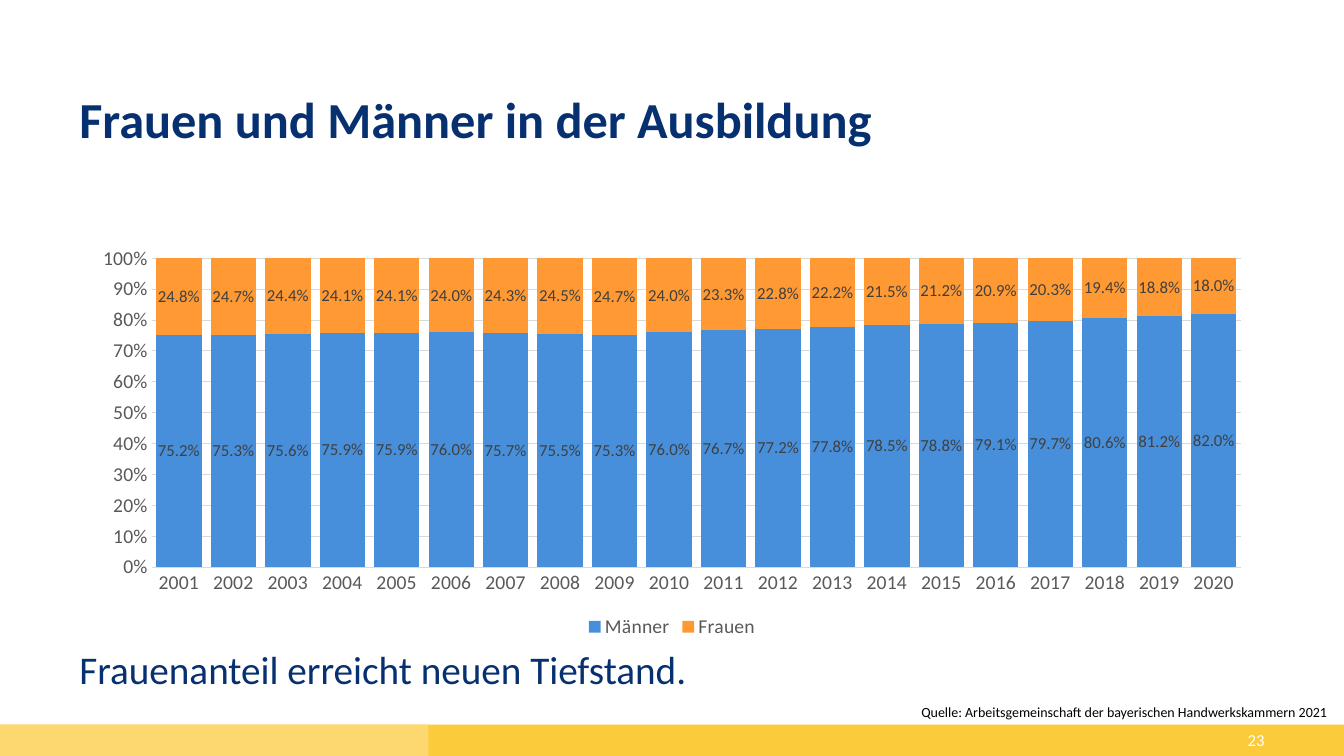
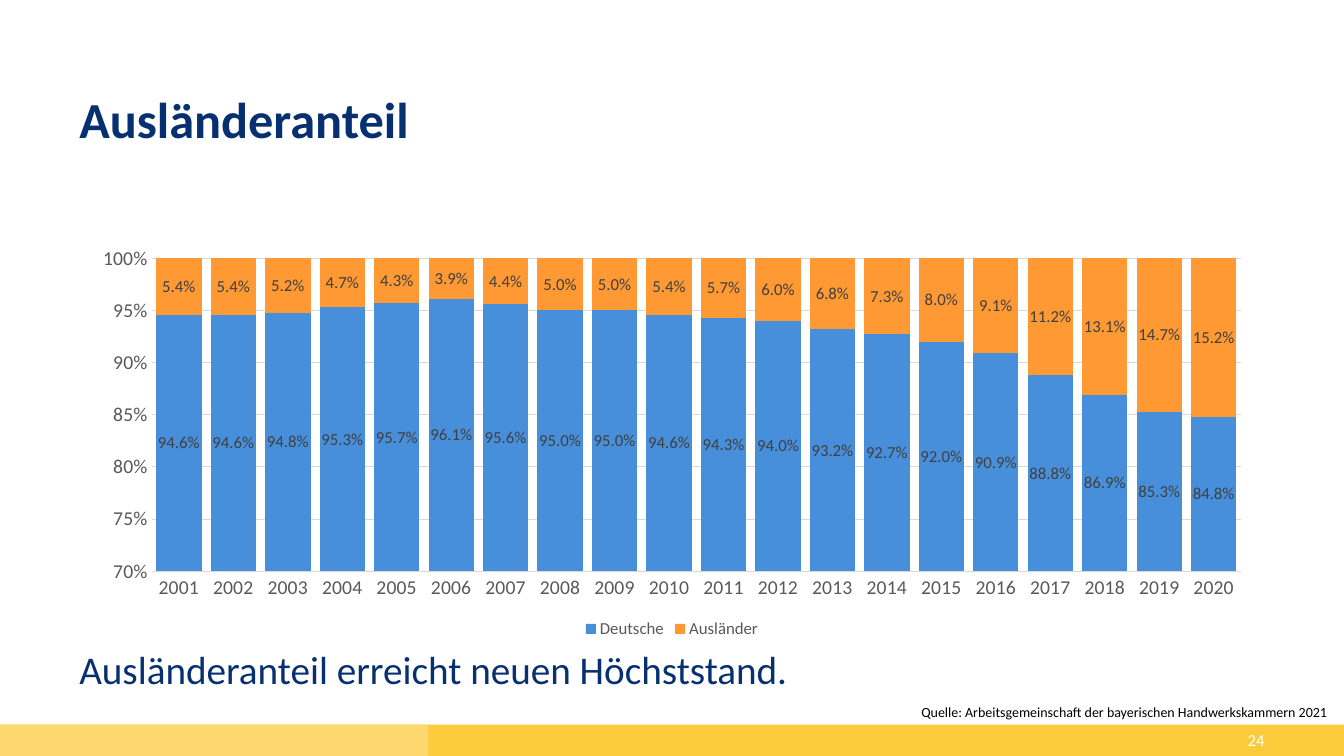
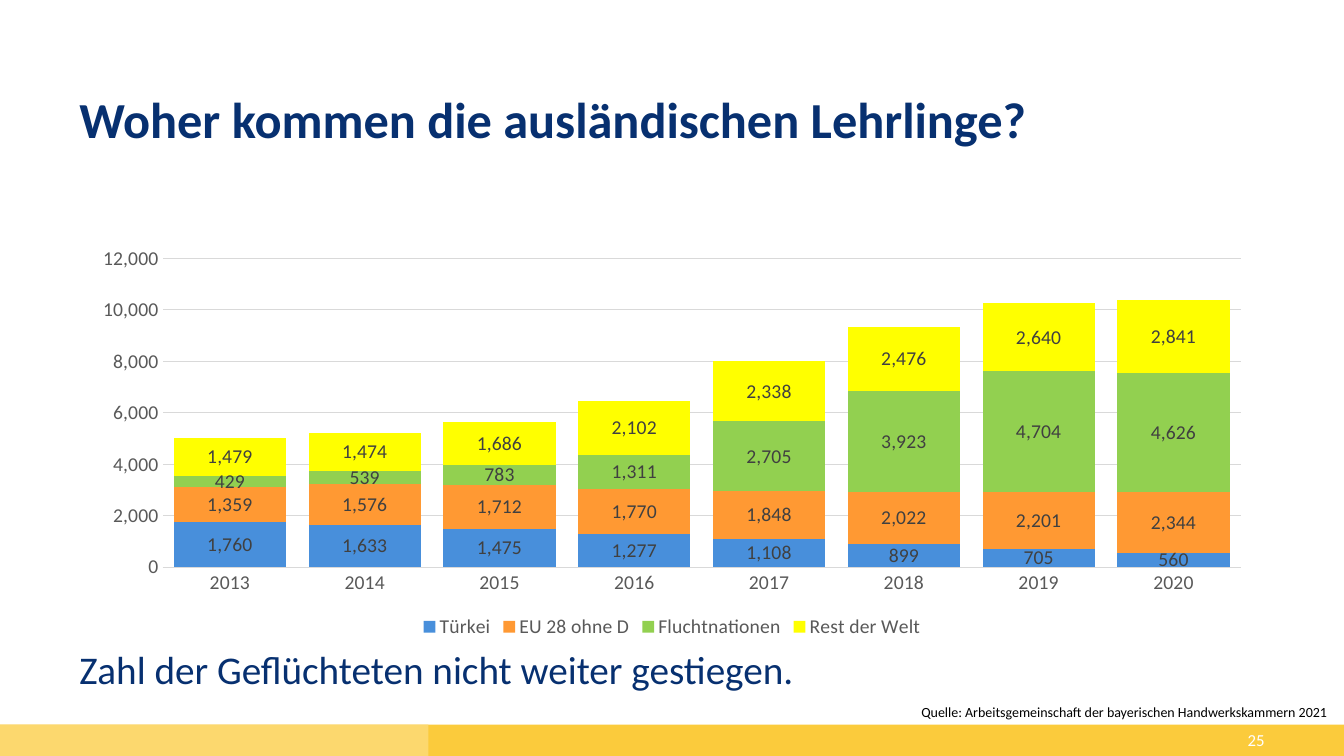
"""Build three slides with stacked column charts on apprentices in the Bavarian crafts."""
from dataclasses import dataclass
from typing import Optional

import pptx
import pptx.chart.data
import pptx.dml.color
import pptx.enum.chart
import pptx.enum.shapes
import pptx.enum.text
import pptx.util

Cm = pptx.util.Cm
Pt = pptx.util.Pt
RGBColor = pptx.dml.color.RGBColor
ChartType = pptx.enum.chart.XL_CHART_TYPE
Align = pptx.enum.text.PP_ALIGN
Anchor = pptx.enum.text.MSO_ANCHOR


def color(code: str) -> RGBColor:
    return RGBColor.from_string(code)


@dataclass(frozen=True)
class Theme:
    font: str = "Calibri"
    navy: str = "073070"
    black: str = "000000"
    white: str = "FFFFFF"
    band: str = "FBCB3C"
    band_light: str = "FCD86E"
    grid: str = "D9D9D9"
    axis_text: str = "595959"
    label_text: str = "404040"
    series: tuple[str, ...] = ("488FDB", "FF9933", "92D050", "FFFF00")
    title_size: int = 36
    claim_size: int = 28
    axis_size: int = 14
    small_size: int = 12
    source_size: int = 10
    line_width: float = 0.75


@dataclass(frozen=True)
class Box:
    left: float
    top: float
    width: float
    height: float

    def lengths(self) -> tuple[Cm, Cm, Cm, Cm]:
        return Cm(self.left), Cm(self.top), Cm(self.width), Cm(self.height)


@dataclass(frozen=True)
class ChartSlide:
    title: str
    claim: str
    number: int
    first_year: int
    series: dict[str, list[float]]
    chart_type: ChartType
    axis_format: str
    label_format: str
    label_size: int
    legend_size: int
    major_unit: float
    minimum: float = 0
    maximum: Optional[float] = None


THEME = Theme()
SLIDE_WIDTH, SLIDE_HEIGHT = 33.87, 19.05
MARGIN, CONTENT_WIDTH = 2.0, 29.87
BAND_TOP, BAND_HEIGHT = 18.26, 0.79
TITLE_BOX = Box(MARGIN, 2.39, CONTENT_WIDTH, 2.67)
CHART_BOX = Box(MARGIN, 6, CONTENT_WIDTH, 10.2)
CLAIM_BOX = Box(MARGIN, 16.26, 29.08, 1.63)
SOURCE_BOX = Box(23.22, 17.73, 10.4, 0.43)
NUMBER_BOX = Box(24.25, BAND_TOP, 7.62, BAND_HEIGHT)
BANDS = (
    (Box(0, BAND_TOP, SLIDE_WIDTH, BAND_HEIGHT), THEME.band),
    (Box(0, BAND_TOP, 10.8, BAND_HEIGHT), THEME.band_light),
)
SOURCE = "Quelle: Arbeitsgemeinschaft der bayerischen Handwerkskammern 2021"


def shares(first: str, second: str, percentages: list[float]) -> dict[str, list[float]]:
    """Return two series of shares that add up to one in each year."""
    return {
        first: [round(value / 100, 3) for value in percentages],
        second: [round(1 - value / 100, 3) for value in percentages],
    }


SLIDES = (
    ChartSlide(
        "Frauen und Männer in der Ausbildung", "Frauenanteil erreicht neuen Tiefstand.",
        23, 2001,
        shares("Männer", "Frauen", [
            75.2, 75.3, 75.6, 75.9, 75.9, 76.0, 75.7, 75.5, 75.3, 76.0,
            76.7, 77.2, 77.8, 78.5, 78.8, 79.1, 79.7, 80.6, 81.2, 82.0,
        ]),
        ChartType.COLUMN_STACKED_100, "0%", "0.0%",
        label_size=THEME.small_size, legend_size=THEME.axis_size,
        major_unit=0.1, maximum=1,
    ),
    ChartSlide(
        "Ausländeranteil", "Ausländeranteil erreicht neuen Höchststand.",
        24, 2001,
        shares("Deutsche", "Ausländer", [
            94.6, 94.6, 94.8, 95.3, 95.7, 96.1, 95.6, 95.0, 95.0, 94.6,
            94.3, 94.0, 93.2, 92.7, 92.0, 90.9, 88.8, 86.9, 85.3, 84.8,
        ]),
        ChartType.COLUMN_STACKED_100, "0%", "0.0%",
        label_size=THEME.small_size, legend_size=THEME.small_size,
        major_unit=0.05, minimum=0.7, maximum=1,
    ),
    ChartSlide(
        "Woher kommen die ausländischen Lehrlinge?",
        "Zahl der Geflüchteten nicht weiter gestiegen.",
        25, 2013,
        {
            "Türkei": [1760, 1633, 1475, 1277, 1108, 899, 705, 560],
            "EU 28 ohne D": [1359, 1576, 1712, 1770, 1848, 2022, 2201, 2344],
            "Fluchtnationen": [429, 539, 783, 1311, 2705, 3923, 4704, 4626],
            "Rest der Welt": [1479, 1474, 1686, 2102, 2338, 2476, 2640, 2841],
        },
        ChartType.COLUMN_STACKED, "#,##0", "#,##0",
        label_size=THEME.axis_size, legend_size=THEME.axis_size,
        major_unit=2000, maximum=12000,
    ),
)


def style_font(font: pptx.text.text.Font, size: int, code: str, bold: bool = False) -> None:
    """Give a font the deck's typeface with a size and colour."""
    font.name = THEME.font
    font.size = Pt(size)
    font.bold = bold
    font.color.rgb = color(code)


def fill_text(shape: pptx.shapes.base.BaseShape, text: str, size: int, code: str,
              bold: bool = False, align: Align = Align.LEFT,
              anchor: Anchor = Anchor.TOP) -> pptx.text.text._Paragraph:
    """Put one paragraph into a shape without insets and return it."""
    frame = shape.text_frame
    frame.text = text
    frame.word_wrap = True
    frame.auto_size = pptx.enum.text.MSO_AUTO_SIZE.NONE
    frame.vertical_anchor = anchor
    frame.margin_left = frame.margin_top = frame.margin_right = frame.margin_bottom = 0
    paragraph = frame.paragraphs[0]
    paragraph.alignment = align
    style_font(paragraph.font, size, code, bold)
    return paragraph


def add_text(slide: pptx.slide.Slide, box: Box, text: str, size: int, code: str,
             align: Align = Align.LEFT, anchor: Anchor = Anchor.TOP) -> None:
    """Add a text box with one paragraph."""
    shape = slide.shapes.add_textbox(*box.lengths())
    fill_text(shape, text, size, code, align=align, anchor=anchor)


def set_title(slide: pptx.slide.Slide, text: str) -> None:
    """Place and format the title placeholder."""
    title = slide.shapes.title
    title.left, title.top, title.width, title.height = TITLE_BOX.lengths()
    paragraph = fill_text(title, text, THEME.title_size, THEME.navy, bold=True)
    paragraph.line_spacing = 0.9


def add_layout_bands(slide: pptx.slide.Slide) -> None:
    """Draw the footer bands and move them to the slide's layout, behind its placeholders."""
    layout_tree = slide.slide_layout.element.cSld.spTree
    for position, (box, code) in enumerate(BANDS, start=2):
        band = slide.shapes.add_shape(
            pptx.enum.shapes.MSO_SHAPE.RECTANGLE, *box.lengths())
        band.shadow.inherit = False
        band.fill.solid()
        band.fill.fore_color.rgb = color(code)
        band.line.fill.background()
        layout_tree.insert(position, band.element)


def style_line(line: pptx.dml.line.LineFormat) -> None:
    """Make a line thin and grey."""
    line.color.rgb = color(THEME.grid)
    line.width = Pt(THEME.line_width)


def style_axes(chart: pptx.chart.chart.Chart, content: ChartSlide) -> None:
    """Format both axes and the horizontal grid."""
    for axis in (chart.category_axis, chart.value_axis):
        axis.major_tick_mark = axis.minor_tick_mark = pptx.enum.chart.XL_TICK_MARK.NONE
        style_font(axis.tick_labels.font, THEME.axis_size, THEME.axis_text)
    style_line(chart.category_axis.format.line)
    value_axis = chart.value_axis
    value_axis.format.line.fill.background()
    value_axis.has_major_gridlines = True
    style_line(value_axis.major_gridlines.format.line)
    value_axis.minimum_scale = content.minimum
    value_axis.maximum_scale = content.maximum
    value_axis.major_unit = content.major_unit
    value_axis.tick_labels.number_format = content.axis_format
    value_axis.tick_labels.number_format_is_linked = False


def add_column_chart(slide: pptx.slide.Slide, content: ChartSlide) -> None:
    """Add the stacked column chart with labels and legend."""
    data = pptx.chart.data.CategoryChartData(number_format=content.label_format)
    year_count = len(next(iter(content.series.values())))
    data.categories = [str(content.first_year + index) for index in range(year_count)]
    for name, values in content.series.items():
        data.add_series(name, values)
    chart = slide.shapes.add_chart(content.chart_type, *CHART_BOX.lengths(), data).chart
    chart.has_title = False
    style_font(chart.font, THEME.source_size, THEME.black)
    style_axes(chart, content)

    chart.has_legend = True
    chart.legend.position = pptx.enum.chart.XL_LEGEND_POSITION.BOTTOM
    chart.legend.include_in_layout = False
    style_font(chart.legend.font, content.legend_size, THEME.axis_text)

    plot = chart.plots[0]
    plot.gap_width = 20
    plot.overlap = 100
    plot.vary_by_categories = False
    for series, code in zip(plot.series, THEME.series):
        series.format.fill.solid()
        series.format.fill.fore_color.rgb = color(code)
        labels = series.data_labels
        labels.show_value = True
        labels.number_format = content.label_format
        labels.number_format_is_linked = False
        style_font(labels.font, content.label_size, THEME.label_text)


def add_chart_slide(presentation: pptx.presentation.Presentation,
                    content: ChartSlide) -> pptx.slide.Slide:
    """Add one slide with title, chart, claim, source and number."""
    slide = presentation.slides.add_slide(presentation.slide_layouts.get_by_name("Title Only"))
    set_title(slide, content.title)
    add_text(slide, NUMBER_BOX, str(content.number), THEME.small_size, THEME.white,
             align=Align.RIGHT, anchor=Anchor.MIDDLE)
    add_column_chart(slide, content)
    add_text(slide, SOURCE_BOX, SOURCE, THEME.source_size, THEME.black)
    add_text(slide, CLAIM_BOX, content.claim, THEME.claim_size, THEME.navy)
    return slide


def main() -> None:
    """Build and save the presentation."""
    presentation = pptx.Presentation()
    presentation.slide_width = Cm(SLIDE_WIDTH)
    presentation.slide_height = Cm(SLIDE_HEIGHT)
    slides = [add_chart_slide(presentation, content) for content in SLIDES]
    add_layout_bands(slides[0])
    presentation.save("out.pptx")


if __name__ == "__main__":
    main()
